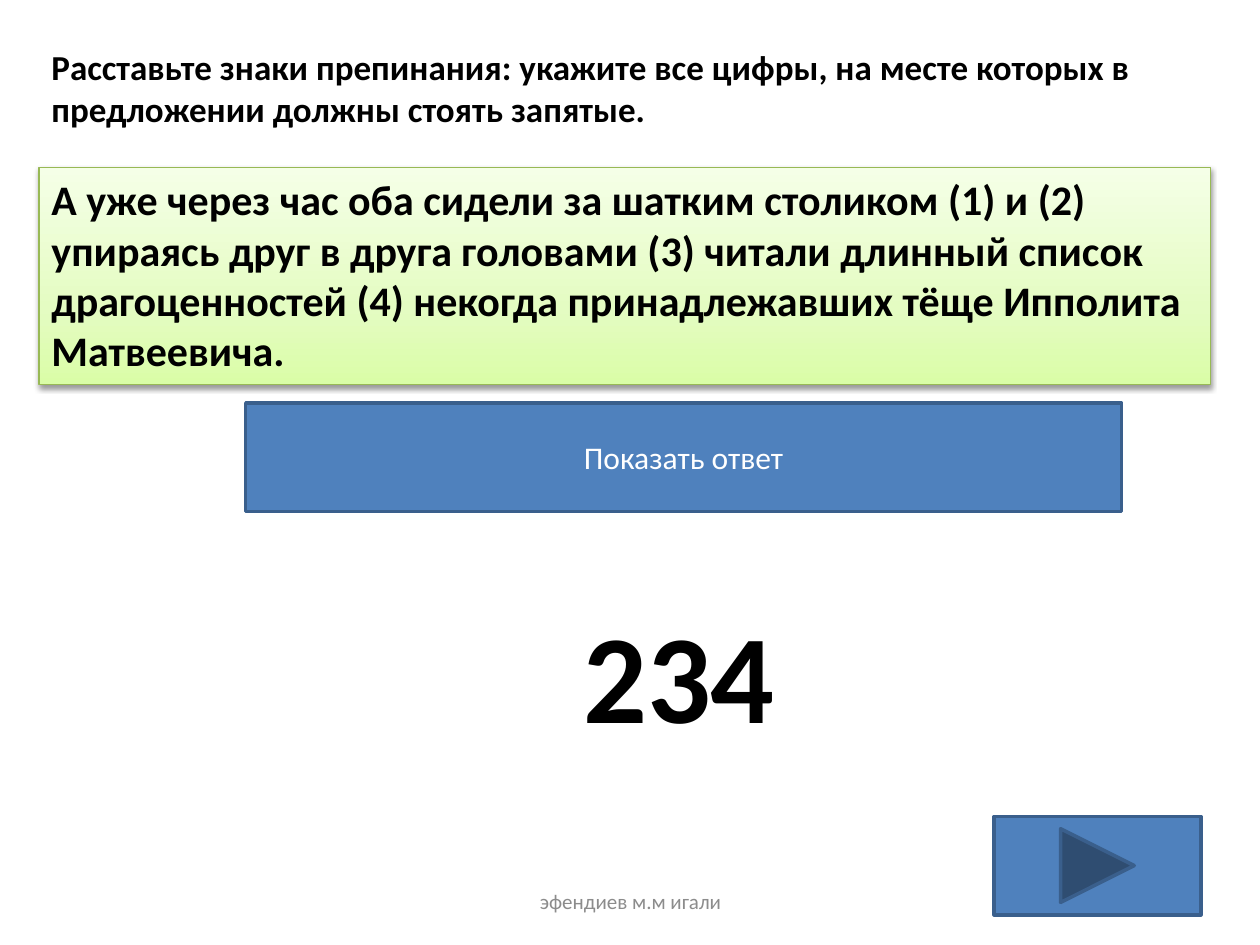
from copy import deepcopy

from lxml.etree import SubElement
from pptx import Presentation
from pptx.dml.color import RGBColor
from pptx.enum.shapes import MSO_SHAPE as SHAPE
from pptx.enum.text import MSO_ANCHOR as ANCHOR, PP_ALIGN as ALIGN
from pptx.oxml.ns import qn
from pptx.util import Inches, Pt

BLACK = RGBColor(0x00, 0x00, 0x00)
WHITE = RGBColor(0xFF, 0xFF, 0xFF)
GRAY = RGBColor(0x8C, 0x8C, 0x8C)
BLUE = RGBColor(0x4F, 0x81, 0xBD)
DARK_BLUE = RGBColor(0x3A, 0x5F, 0x8C)
GREEN = RGBColor(0x98, 0xB9, 0x55)
GREEN_STOPS = [
    (0, RGBColor(0xDA, 0xFD, 0xA7)),
    (0.35, RGBColor(0xE4, 0xFC, 0xC2)),
    (1, RGBColor(0xF5, 0xFF, 0xE7)),
]


def add_shape(kind, box, line, width):
    sp = s.shapes.add_shape(kind, *map(Inches, box))
    sp.shadow.inherit = False
    sp.line.color.rgb = line
    sp.line.width = Pt(width)
    return sp


def write(sp, text, size, color=BLACK, bold=False, align=ALIGN.LEFT, anchor=ANCHOR.TOP):
    tf = sp.text_frame
    tf.word_wrap = True
    tf.vertical_anchor = anchor
    p = tf.paragraphs[0]
    p.alignment = align
    r = p.add_run()
    r.text = text
    r.font.color.rgb = color
    for name, value in {"name": "Calibri", "size": Pt(size), "bold": bold}.items():
        setattr(r.font, name, value)


prs = Presentation()
prs.slide_width, prs.slide_height = Inches(10), Inches(7.5)
s = prs.slides.add_slide(prs.slide_layouts[6])

# Task, answer and footer
centered = {"align": ALIGN.CENTER}
middle = {"align": ALIGN.CENTER, "anchor": ANCHOR.MIDDLE}
texts = [
    ((0.31, 0.31, 9.38, 0.77),
     "Расставьте знаки препинания: укажите все цифры, на месте которых "
     "в предложении должны стоять запятые.", 20, {"bold": True}),
    ((1.95, 4.69, 6.88, 1.31), "234", 72, {"bold": True, **centered}),
    ((3.42, 6.95, 3.17, 0.4), "эфендиев м.м игали", 12, {"color": GRAY, **middle}),
]
for box, text, size, fmt in texts:
    write(s.shapes.add_textbox(*map(Inches, box)), text, size, **fmt)

# Sentence panel with a gradient, light at the top
panel = add_shape(SHAPE.RECTANGLE, (0.31, 1.33, 9.3, 1.72), GREEN, 0.75)
panel.fill.gradient()
panel.fill.gradient_angle = 90
gs_list = panel.fill._fill._gradFill.find(qn("a:gsLst"))
gs_list.insert(1, deepcopy(gs_list[0]))
for stop, (position, color) in zip(panel.fill.gradient_stops, GREEN_STOPS):
    stop.position = position
    stop.color.rgb = color

# Soft shadow below the panel
effects = panel._element.spPr.find(qn("a:effectLst"))
shadow = SubElement(effects, qn("a:outerShdw"), blurRad=str(Pt(3.1)),
                    dist=str(Pt(1.6)), dir="5400000", rotWithShape="0")
shade = SubElement(shadow, qn("a:srgbClr"), val=str(BLACK))
SubElement(shade, qn("a:alpha"), val="38000")

write(panel, "А уже через час оба сидели за шатким столиком (1) и (2) упираясь "
      "друг в друга головами (3) читали длинный список драгоценностей (4) "
      "некогда принадлежавших тёще Ипполита Матвеевича.", 24, bold=True)

# Buttons
answer = add_shape(SHAPE.ACTION_BUTTON_CUSTOM, (1.95, 3.2, 6.95, 0.86), DARK_BLUE, 2)
forward = add_shape(SHAPE.ACTION_BUTTON_FORWARD_OR_NEXT, (7.89, 6.48, 1.64, 0.78),
                    DARK_BLUE, 2)
for button in (answer, forward):
    button.fill.solid()
    button.fill.fore_color.rgb = BLUE
write(answer, "Показать ответ", 18, WHITE, **middle)

prs.save("out.pptx")
